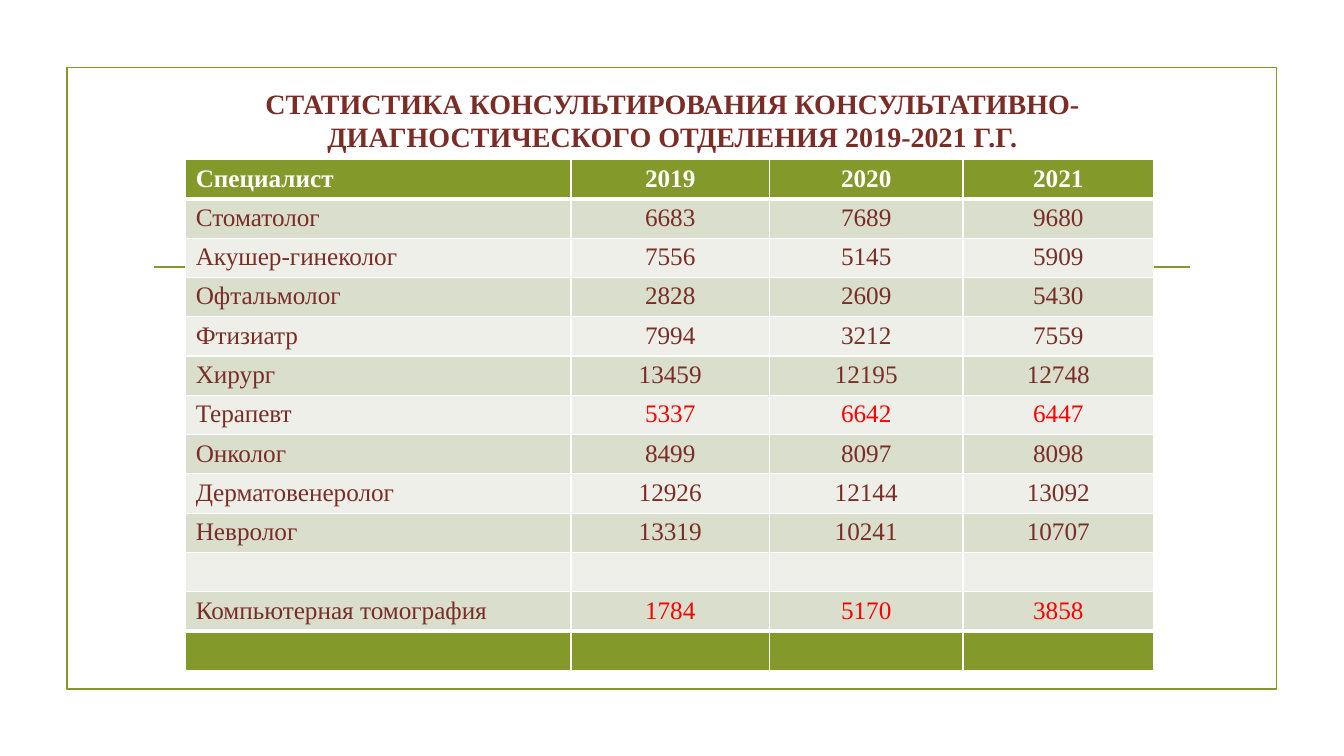
from lxml import etree
from pptx import Presentation
from pptx.dml.color import RGBColor
from pptx.enum.shapes import MSO_CONNECTOR, MSO_SHAPE
from pptx.enum.text import MSO_ANCHOR, MSO_AUTO_SIZE, PP_ALIGN
from pptx.oxml.ns import qn
from pptx.util import Cm, Pt

FONT = "Times New Roman"
GREEN, BROWN, RED, WHITE = "83992A", "7A2D26", "FF0000", "FFFFFF"
BANDS = ("EDEFE8", "D9DECD")
COL_WIDTHS = (9.71, 5.0, 4.88, 4.8)
ROW_HEIGHT = 0.99
ROWS = (
    ("Специалист", "2019", "2020", "2021"),
    ("Стоматолог", "6683", "7689", "9680"),
    ("Акушер-гинеколог", "7556", "5145", "5909"),
    ("Офтальмолог", "2828", "2609", "5430"),
    ("Фтизиатр", "7994", "3212", "7559"),
    ("Хирург", "13459", "12195", "12748"),
    ("Терапевт", "5337", "6642", "6447"),
    ("Онколог", "8499", "8097", "8098"),
    ("Дерматовенеролог", "12926", "12144", "13092"),
    ("Невролог", "13319", "10241", "10707"),
    ("", "", "", ""),
    ("Компьютерная томография", "1784", "5170", "3858"),
    ("", "", "", ""),
)
RED_ROWS = ("Терапевт", "Компьютерная томография")


def rgb(color):
    return RGBColor.from_string(color)


def write(tf, text, size=18, color=BROWN, bold=False, align=PP_ALIGN.LEFT):
    p = tf.paragraphs[0]
    p.alignment = align
    if not text:
        end = etree.SubElement(p._p, qn("a:endParaRPr"), sz=str(size * 100))
        etree.SubElement(end, qn("a:latin"), typeface=FONT)
        return
    r = p.add_run()
    r.text = text
    r.font.name = FONT
    r.font.size = Pt(size)
    r.font.bold = bold
    r.font.color.rgb = rgb(color)


def add_frame(slide, left, top, width, height):
    sp = slide.shapes.add_shape(MSO_SHAPE.RECTANGLE, Cm(left), Cm(top), Cm(width), Cm(height))
    sp.shadow.inherit = False
    sp.fill.background()
    sp.line.color.rgb = rgb(GREEN)
    sp.line.width = Pt(1.25)


def add_rule(slide, left, right, y):
    line = slide.shapes.add_connector(MSO_CONNECTOR.STRAIGHT, Cm(left), Cm(y), Cm(right), Cm(y))
    line.line.color.rgb = rgb(GREEN)
    line.line.width = Pt(1.25)
    etree.SubElement(line._element.spPr, qn("a:effectLst"))


def set_title(slide, text, left, top, width, height):
    sp = slide.shapes.title
    sp.left, sp.top, sp.width, sp.height = Cm(left), Cm(top), Cm(width), Cm(height)
    tf = sp.text_frame
    tf.word_wrap = True
    tf.auto_size = MSO_AUTO_SIZE.NONE
    tf.vertical_anchor = MSO_ANCHOR.MIDDLE
    write(tf, text, size=20, bold=True, align=PP_ALIGN.CENTER)


def set_borders(cell, top, bottom):
    tc_pr = cell._tc.get_or_add_tcPr()
    for side, width in (("L", 1), ("R", 1), ("T", top), ("B", bottom)):
        ln = etree.SubElement(tc_pr, qn(f"a:ln{side}"), w=str(Pt(width)))
        fill = etree.SubElement(ln, qn("a:solidFill"))
        etree.SubElement(fill, qn("a:srgbClr"), val=WHITE)


def add_statistics(slide, left, top):
    last = len(ROWS) - 1
    frame = slide.shapes.add_table(len(ROWS), len(COL_WIDTHS), Cm(left), Cm(top),
                                   Cm(sum(COL_WIDTHS)), Cm(ROW_HEIGHT * len(ROWS)))
    table = frame.table
    table.last_row = True
    for column, width in zip(table.columns, COL_WIDTHS):
        column.width = Cm(width)
    for i, values in enumerate(ROWS):
        table.rows[i].height = Cm(ROW_HEIGHT)
        for j, value in enumerate(values):
            cell = table.cell(i, j)
            set_borders(cell, top=3 if i in (1, last) else 1,
                        bottom=3 if i in (0, last - 1) else 1)
            cell.fill.solid()
            cell.fill.fore_color.rgb = rgb(GREEN if i in (0, last) else BANDS[i % 2])
            color = WHITE if i == 0 else RED if j and values[0] in RED_ROWS else BROWN
            write(cell.text_frame, value, color=color, bold=i == 0,
                  align=PP_ALIGN.CENTER if j else PP_ALIGN.LEFT)


def main():
    prs = Presentation()
    prs.slide_width, prs.slide_height = Cm(33.87), Cm(19.05)
    slide = prs.slides.add_slide(prs.slide_layouts[5])
    add_frame(slide, 1.69, 1.7, 30.48, 15.67)
    add_rule(slide, 3.89, 30.0, 6.73)
    set_title(slide, "СТАТИСТИКА КОНСУЛЬТИРОВАНИЯ КОНСУЛЬТАТИВНО-ДИАГНОСТИЧЕСКОГО "
              "ОТДЕЛЕНИЯ 2019-2021 Г.Г.", 3.61, 1.86, 26.67, 2.31)
    add_statistics(slide, 4.68, 4.02)
    prs.save("out.pptx")


if __name__ == "__main__":
    main()
